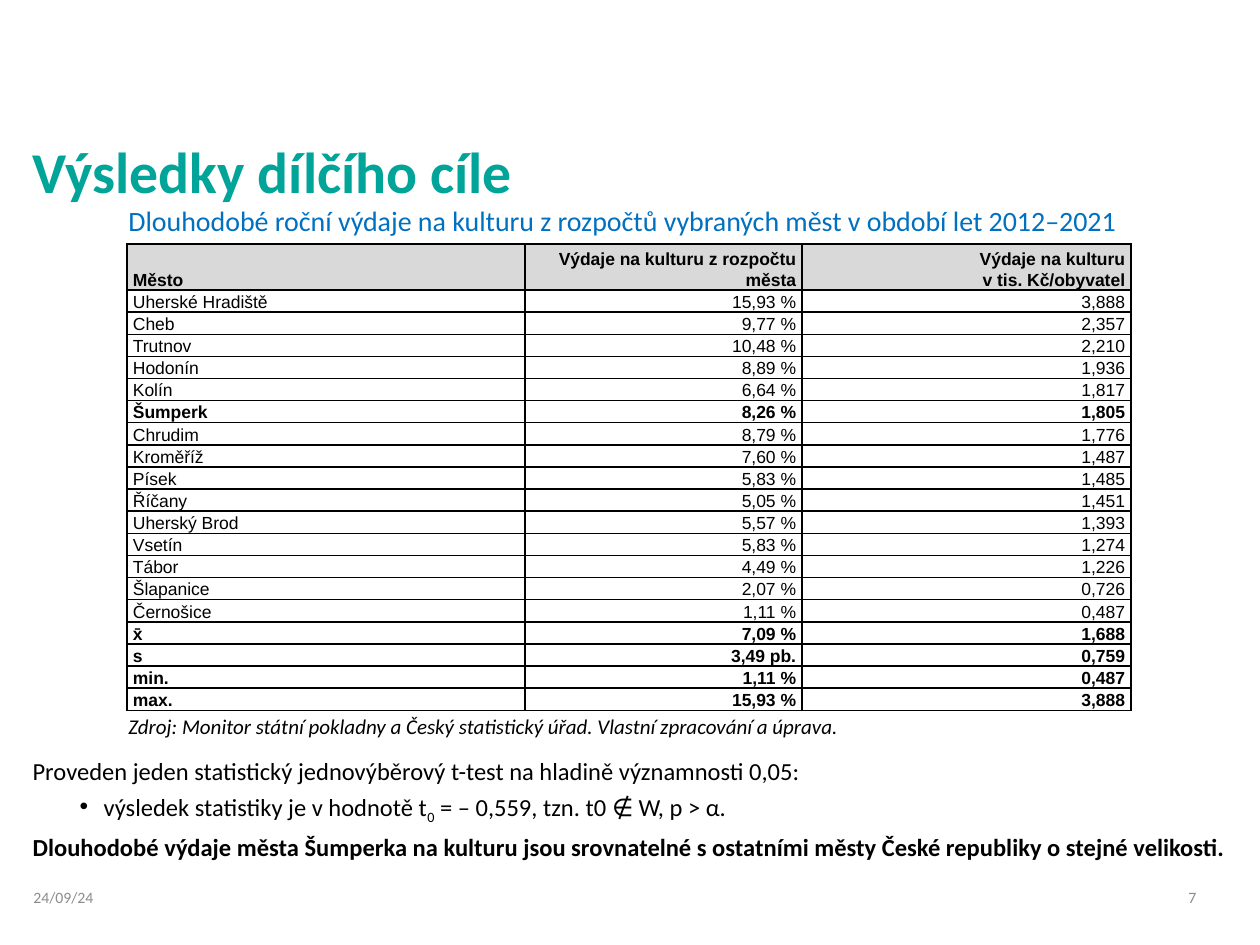
from dataclasses import dataclass

from lxml import etree
from pptx import Presentation
from pptx.dml.color import RGBColor
from pptx.enum.text import MSO_ANCHOR, MSO_AUTO_SIZE, PP_ALIGN
from pptx.oxml.ns import qn
from pptx.util import Emu, Pt

LEFT, RIGHT = PP_ALIGN.LEFT, PP_ALIGN.RIGHT
TOP, MIDDLE, BOTTOM = MSO_ANCHOR.TOP, MSO_ANCHOR.MIDDLE, MSO_ANCHOR.BOTTOM
NO_AUTOFIT = MSO_AUTO_SIZE.NONE
PX_PER_INCH = 126
TITLE_AND_CONTENT = 1


@dataclass(frozen=True)
class Theme:
    font: str = "Calibri"
    table_font: str = "Arial"
    teal: str = "00A499"
    blue: str = "0070C0"
    black: str = "000000"
    gray: str = "8C8C8C"
    header_fill: str = "D9D9D9"
    title_size: int = 33
    caption_size: int = 16
    body_size: int = 14
    source_size: int = 12
    table_size: int = 10
    footer_size: int = 9
    border: float = 1


THEME = Theme()

COLUMN_WIDTHS = [398, 277, 329]
HEADER_HEIGHT = 46
DATA_HEIGHT = 421
HEADER = ["Město", "Výdaje na kulturu z rozpočtu města",
          "Výdaje na kulturu\vv tis. Kč/obyvatel"]
ROWS = [
    ("Uherské Hradiště", "15,93 %", "3,888"),
    ("Cheb", "9,77 %", "2,357"),
    ("Trutnov", "10,48 %", "2,210"),
    ("Hodonín", "8,89 %", "1,936"),
    ("Kolín", "6,64 %", "1,817"),
    ("Šumperk", "8,26 %", "1,805"),
    ("Chrudim", "8,79 %", "1,776"),
    ("Kroměříž", "7,60 %", "1,487"),
    ("Písek", "5,83 %", "1,485"),
    ("Říčany", "5,05 %", "1,451"),
    ("Uherský Brod", "5,57 %", "1,393"),
    ("Vsetín", "5,83 %", "1,274"),
    ("Tábor", "4,49 %", "1,226"),
    ("Šlapanice", "2,07 %", "0,726"),
    ("Černošice", "1,11 %", "0,487"),
    ("x̄", "7,09 %", "1,688"),
    ("s", "3,49 pb.", "0,759"),
    ("min.", "1,11 %", "0,487"),
    ("max.", "15,93 %", "3,888"),
]
BOLD_ROWS = {"Město", "Šumperk", "x̄", "s", "min.", "max."}


def px(length):
    return Emu(round(length * 914400 / PX_PER_INCH))


def place(shape, left, top, width, height):
    shape.left, shape.top = px(left), px(top)
    shape.width, shape.height = px(width), px(height)


def style_runs(para, size, color, font=THEME.font, bold=False, italic=False):
    for run in para.runs:
        run.font.name = font
        run.font.size = Pt(size)
        run.font.color.rgb = RGBColor.from_string(color)
        run.font.bold = bold
        run.font.italic = italic


def set_bullet(para, char=None, margin=0, indent=0):
    properties = para._p.get_or_add_pPr()
    properties.set("marL", str(px(margin)))
    properties.set("indent", str(px(indent)))
    if char:
        etree.SubElement(properties, qn("a:buChar"), char=char)
    else:
        etree.SubElement(properties, qn("a:buNone"))


def add_text(page, frame, text, size, color, anchor=TOP, italic=False):
    box = page.shapes.add_textbox(*map(px, frame))
    box.text_frame.word_wrap = True
    box.text_frame.vertical_anchor = anchor
    box.text_frame.text = text
    style_runs(box.text_frame.paragraphs[0], size, color, italic=italic)


def set_borders(cell):
    properties = cell._tc.get_or_add_tcPr()
    for position, side in enumerate(("lnL", "lnR", "lnT", "lnB")):
        line = etree.Element(qn(f"a:{side}"), w=str(Pt(THEME.border)))
        fill = etree.SubElement(line, qn("a:solidFill"))
        etree.SubElement(fill, qn("a:srgbClr"), val=THEME.black)
        properties.insert(position, line)


def fill_cell(cell, text, align, bold, fill):
    cell.margin_left = cell.margin_right = px(6)
    cell.margin_top = cell.margin_bottom = 0
    cell.vertical_anchor = BOTTOM
    if fill:
        cell.fill.solid()
        cell.fill.fore_color.rgb = RGBColor.from_string(fill)
    else:
        cell.fill.background()
    set_borders(cell)
    para = cell.text_frame.paragraphs[0]
    para.text = text
    para.alignment = align
    para.line_spacing = 1.07
    style_runs(para, THEME.table_size, THEME.black, THEME.table_font, bold)


def add_spending_table(page):
    rows = [HEADER, *ROWS]
    frame = page.shapes.add_table(
        len(rows), len(HEADER), px(127), px(244),
        px(sum(COLUMN_WIDTHS)), px(HEADER_HEIGHT + DATA_HEIGHT))
    table = frame.table
    table.first_row = table.horz_banding = False
    for column, width in zip(table.columns, COLUMN_WIDTHS):
        column.width = px(width)
    for index, values in enumerate(rows):
        is_header = index == 0
        table.rows[index].height = px(
            HEADER_HEIGHT if is_header else DATA_HEIGHT / len(ROWS))
        for number, text in enumerate(values):
            fill_cell(table.cell(index, number), text,
                      RIGHT if number else LEFT, values[0] in BOLD_ROWS,
                      THEME.header_fill if is_header else None)


def fill_title(title):
    place(title, 20, 71, 1220, 141)
    title.text_frame.auto_size = NO_AUTOFIT
    title.text_frame.vertical_anchor = BOTTOM
    para = title.text_frame.paragraphs[0]
    para.text = "Výsledky dílčího cíle"
    para.alignment = LEFT
    para.line_spacing = 0.9
    style_runs(para, THEME.title_size, THEME.teal, bold=True)


def fill_conclusions(body):
    place(body, 20, 753, 1220, 121)
    text_frame = body.text_frame
    text_frame.auto_size = NO_AUTOFIT
    intro = text_frame.paragraphs[0]
    result, conclusion = (text_frame.add_paragraph() for _ in range(2))
    intro.text = "Proveden jeden statistický jednovýběrový t-test na hladině významnosti 0,05:"
    for part in ("výsledek statistiky je v hodnotě t", "0", " = – 0,559, tzn. t0 ∉ W, p > α."):
        result.add_run().text = part
    conclusion.text = ("Dlouhodobé výdaje města Šumperka na kulturu jsou srovnatelné "
                       "s ostatními městy České republiky o stejné velikosti.")

    result.level = 1
    set_bullet(intro)
    set_bullet(result, "•", 71, -24)
    set_bullet(conclusion)
    for para, space in ((intro, 0), (result, 3.8), (conclusion, 7.5)):
        para.line_spacing = 0.9
        para.space_before = Pt(space)
        style_runs(para, THEME.body_size, THEME.black, bold=para is conclusion)
    # Subscript of the test statistic
    result.runs[1].font._element.set("baseline", "-25000")


def main():
    deck = Presentation()
    deck.slide_width, deck.slide_height = px(1260), px(945)
    page = deck.slides.add_slide(deck.slide_layouts[TITLE_AND_CONTENT])

    # Title and table with its caption and source
    fill_title(page.shapes.title)
    add_spending_table(page)
    add_text(page, (116, 197, 1027, 47),
             "Dlouhodobé roční výdaje na kulturu z rozpočtů vybraných měst v období let 2012–2021",
             THEME.caption_size, THEME.blue)
    add_text(page, (116, 707, 769, 38),
             "Zdroj: Monitor státní pokladny a Český statistický úřad. Vlastní zpracování a úprava.",
             THEME.source_size, THEME.black, italic=True)

    # Conclusions
    fill_conclusions(page.placeholders[1])

    # Footer
    add_text(page, (21, 876, 107, 43), "24/09/24", THEME.footer_size, THEME.gray, MIDDLE)
    add_text(page, (1176, 876, 63, 43), "7", THEME.footer_size, THEME.gray, MIDDLE)

    deck.save("out.pptx")


if __name__ == "__main__":
    main()
